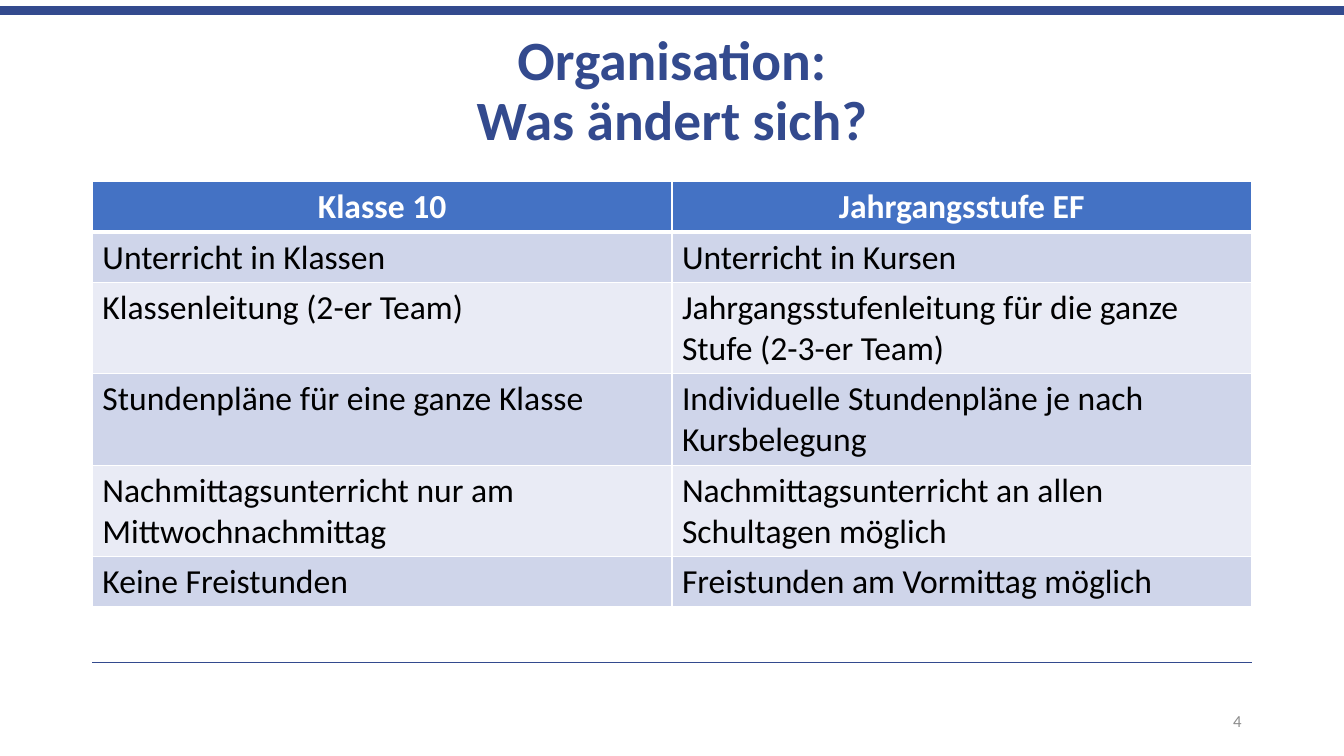
from lxml.etree import SubElement
from pptx import Presentation
from pptx.dml.color import RGBColor
from pptx.enum.shapes import MSO_CONNECTOR as Connector
from pptx.enum.text import MSO_ANCHOR as Anchor, PP_ALIGN as Align
from pptx.oxml.ns import qn
from pptx.util import Emu, Pt

COLORS = {
    "navy": "334A8E",
    "header": "4472C4",
    "band_dark": "CFD5EA",
    "band_light": "E9EBF5",
    "white": "FFFFFF",
    "black": "000000",
    "grey": "8C8C8C",
}

ROWS = [
    ("Klasse 10", "Jahrgangsstufe EF"),
    ("Unterricht in Klassen", "Unterricht in Kursen"),
    ("Klassenleitung (2-er Team)", "Jahrgangsstufenleitung für die ganze Stufe (2-3-er Team)"),
    ("Stundenpläne für eine ganze Klasse", "Individuelle Stundenpläne je nach Kursbelegung"),
    ("Nachmittagsunterricht nur am Mittwochnachmittag",
     "Nachmittagsunterricht an allen Schultagen möglich"),
    ("Keine Freistunden", "Freistunden am Vormittag möglich"),
]
ROW_HEIGHTS = [48, 48, 87, 87, 87, 48]
WIDTH, HEIGHT = 1280, 720
MARGIN = 88
CONTENT_WIDTH = WIDTH - 2 * MARGIN


def px(length):
    return Emu(length * 9525)


def rgb(name):
    return RGBColor.from_string(COLORS[name])


class SlideBuilder:
    """Draws styled elements on the current slide."""

    font_name = "Calibri"

    def __init__(self, slide):
        self.slide = slide

    def style(self, paragraph, size, color, bold=False, align=Align.LEFT):
        paragraph.alignment = align
        font = paragraph.font
        font.name, font.size, font.bold = self.font_name, Pt(size), bold
        font.color.rgb = rgb(color)

    def rule(self, left, right, y, weight):
        line = self.slide.shapes.add_connector(
            Connector.STRAIGHT, px(left), px(y), px(right), px(y))
        line.line.color.rgb = rgb("navy")
        line.line.width = Pt(weight)
        SubElement(line._element.spPr, qn("a:effectLst"))

    def text(self, left, top, width, height, text, spacing=1.0, **style):
        box = self.slide.shapes.add_textbox(px(left), px(top), px(width), px(height))
        frame = box.text_frame
        frame.word_wrap = True
        frame.vertical_anchor = Anchor.MIDDLE
        paragraph = frame.paragraphs[0]
        paragraph.text = text
        paragraph.line_spacing = spacing
        self.style(paragraph, **style)

    def borders(self, cell, top, bottom):
        properties = cell._tc.get_or_add_tcPr()
        for side, weight in (("L", 1), ("R", 1), ("T", top), ("B", bottom)):
            line = SubElement(properties, qn(f"a:ln{side}"), w=str(Pt(weight)))
            fill = SubElement(line, qn("a:solidFill"))
            SubElement(fill, qn("a:srgbClr"), val=COLORS["white"])

    def table(self, left, top, width, rows, heights):
        columns = len(rows[0])
        table = self.slide.shapes.add_table(
            len(rows), columns, px(left), px(top), px(width), px(sum(heights))).table
        for column in table.columns:
            column.width = px(width // columns)
        for row, height in enumerate(heights):
            table.rows[row].height = px(height)
            for column, text in enumerate(rows[row]):
                self.cell(table.cell(row, column), row, text)

    def cell(self, cell, row, text):
        header = row == 0
        band = "band_dark" if row % 2 else "band_light"
        self.borders(cell, top=3 if row == 1 else 1, bottom=3 if header else 1)
        cell.fill.solid()
        cell.fill.fore_color.rgb = rgb("header" if header else band)
        paragraph = cell.text_frame.paragraphs[0]
        paragraph.text = text
        self.style(paragraph, 24, "white" if header else "black", header,
                   Align.CENTER if header else Align.LEFT)


def main():
    presentation = Presentation()
    presentation.slide_width, presentation.slide_height = px(WIDTH), px(HEIGHT)
    builder = SlideBuilder(presentation.slides.add_slide(presentation.slide_layouts[6]))
    builder.rule(0, WIDTH, 10, 6)
    builder.rule(MARGIN, WIDTH - MARGIN, 631, 1)
    builder.text(MARGIN, 38, CONTENT_WIDTH, 101, "Organisation:\vWas ändert sich?",
                 spacing=0.9, size=39.6, color="navy", bold=True, align=Align.CENTER)
    builder.table(MARGIN, 173, CONTENT_WIDTH, ROWS, ROW_HEIGHTS)
    builder.text(904, 667, 288, 38, "4", size=12, color="grey", align=Align.RIGHT)
    presentation.save("out.pptx")


if __name__ == "__main__":
    main()
